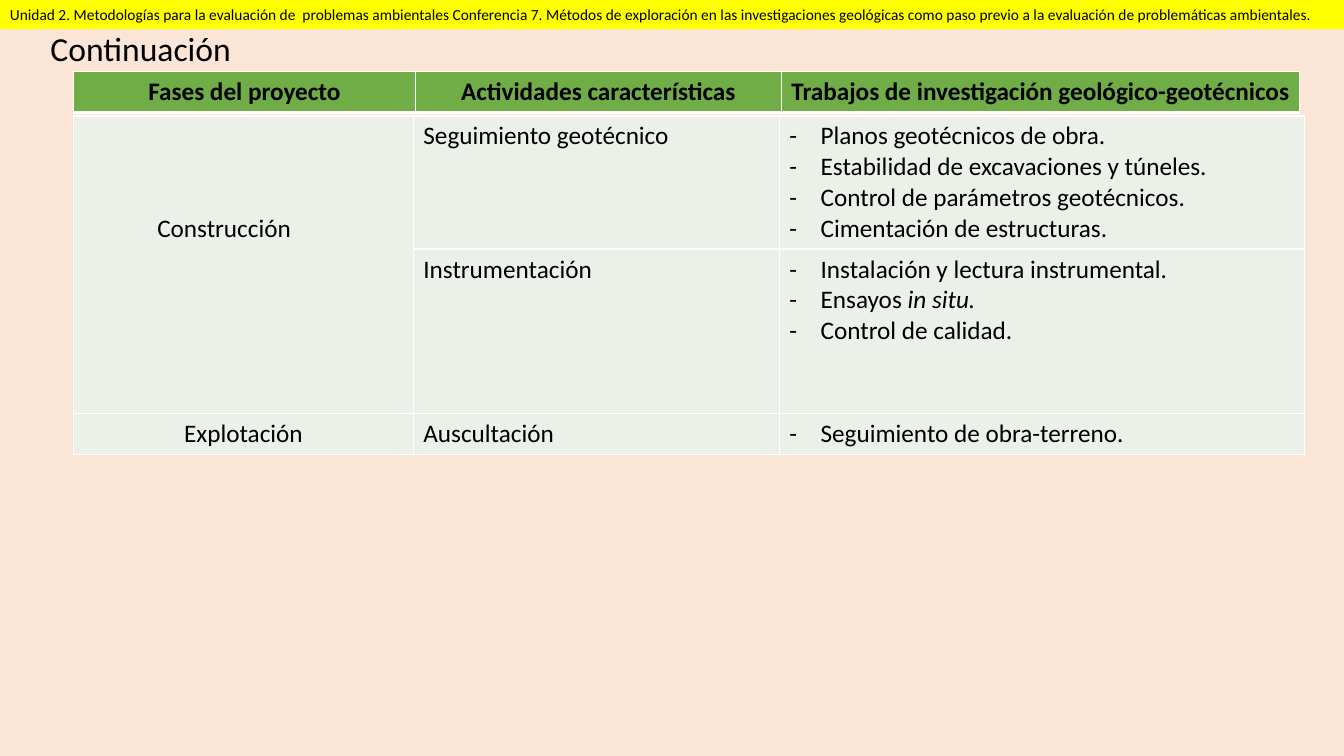
from lxml import etree
from pptx import Presentation
from pptx.dml.color import RGBColor
from pptx.enum.shapes import MSO_SHAPE
from pptx.enum.text import MSO_ANCHOR, MSO_AUTO_SIZE, PP_ALIGN
from pptx.oxml.ns import qn
from pptx.util import Inches, Pt

RECT = MSO_SHAPE.RECTANGLE
TOP, MIDDLE = MSO_ANCHOR.TOP, MSO_ANCHOR.MIDDLE
NO_FIT = MSO_AUTO_SIZE.NONE
LEFT, CENTER = PP_ALIGN.LEFT, PP_ALIGN.CENTER

COLORS = {
    "background": "FBE5D6",
    "banner": "FFFF00",
    "header": "70AD47",
    "body": "EBF1E9",
    "border": "FFFFFF",
    "text": "000000",
}
BANNER = (
    "Unidad 2. Metodologías para la evaluación de  problemas ambientales "
    "Conferencia 7. Métodos de exploración en las investigaciones geológicas "
    "como paso previo a la evaluación de problemáticas ambientales."
)
HEADERS = [
    "Fases del proyecto",
    "Actividades características",
    "Trabajos de investigación geológico-geotécnicos",
]
ACTIVITIES = [
    ("Seguimiento geotécnico", [
        ["Planos geotécnicos de obra."],
        ["Estabilidad de excavaciones y túneles."],
        ["Control de parámetros geotécnicos."],
        ["Cimentación de estructuras."],
    ]),
    ("Instrumentación", [
        ["Instalación y lectura instrumental."],
        ["Ensayos ", "in situ."],
        ["Control de calidad."],
    ]),
    ("Auscultación", [["Seguimiento de obra-terreno."]]),
]


class SlideBuilder:
    font = "Calibri"

    def __init__(self, prs):
        self.s = prs.slides.add_slide(prs.slide_layouts[5])
        fill = self.s.background.fill
        fill.solid()
        fill.fore_color.rgb = self.color("background")

    def color(self, name):
        return RGBColor.from_string(COLORS[name])

    def style(self, p, size, align=LEFT, bold=False):
        p.alignment = align
        p.font.name = self.font
        p.font.size = Pt(size)
        p.font.bold = bold
        p.font.color.rgb = self.color("text")

    def title(self, text, left, top, width, height):
        sp = self.s.shapes.title
        sp.left, sp.top = Inches(left), Inches(top)
        sp.width, sp.height = Inches(width), Inches(height)
        tf = sp.text_frame
        tf.text = text
        tf.word_wrap = False
        tf.auto_size = NO_FIT
        tf.vertical_anchor = TOP
        self.style(tf.paragraphs[0], 24)

    def banner(self, text, left, top, width, height):
        sp = self.s.shapes.add_shape(
            RECT, Inches(left), Inches(top), Inches(width), Inches(height))
        sp.shadow.inherit = False
        sp.fill.solid()
        sp.fill.fore_color.rgb = self.color("banner")
        sp.line.fill.background()
        tf = sp.text_frame
        tf.word_wrap = True
        tf.vertical_anchor = MIDDLE
        tf.text = text
        self.style(tf.paragraphs[0], 11)

    def table(self, left, top, widths, heights, fill, bottom=1):
        frame = self.s.shapes.add_table(
            len(heights), len(widths), Inches(left), Inches(top),
            Inches(sum(widths)), Inches(sum(heights)))
        table = frame.table
        table.first_row = table.horz_banding = False
        for column, width in zip(table.columns, widths):
            column.width = Inches(width)
        for row, height in zip(table.rows, heights):
            row.height = Inches(height)
        for cell in table.iter_cells():
            cell.fill.solid()
            cell.fill.fore_color.rgb = self.color(fill)
            self.borders(cell, bottom)
        return table

    def borders(self, cell, bottom):
        tc_pr = cell._tc.get_or_add_tcPr()
        sides = {"lnL": 1, "lnR": 1, "lnT": 1, "lnB": bottom}
        for i, (side, width) in enumerate(sides.items()):
            ln = etree.Element(qn(f"a:{side}"), w=str(Pt(width)))
            solid = etree.SubElement(ln, qn("a:solidFill"))
            etree.SubElement(solid, qn("a:srgbClr"), val=COLORS["border"])
            tc_pr.insert(i, ln)

    def cell_text(self, cell, text, align=LEFT, bold=False):
        cell.text = text
        self.style(cell.text_frame.paragraphs[0], 18, align, bold)

    def cell_list(self, cell, items):
        tf = cell.text_frame
        for i, parts in enumerate(items):
            p = tf.add_paragraph() if i else tf.paragraphs[0]
            self.style(p, 18)
            for j, part in enumerate(parts):
                r = p.add_run()
                r.text = part
                if j:
                    r.font.italic = True
            p_pr = p._p.get_or_add_pPr()
            p_pr.set("marL", str(Inches(0.31)))
            p_pr.set("indent", str(Inches(-0.31)))
            p_pr.insert(0, etree.Element(qn("a:buFont"), typeface=self.font))
            p_pr.insert(1, etree.Element(qn("a:buChar"), char="-"))


def main():
    prs = Presentation()
    prs.slide_width, prs.slide_height = Inches(13.33), Inches(7.5)
    builder = SlideBuilder(prs)

    phases = builder.table(
        0.73, 1.15, [3.37, 3.63, 5.21], [1.32, 1.63, 0.41], "body")
    construction = phases.cell(0, 0)
    construction.merge(phases.cell(1, 0))
    construction.margin_left, construction.margin_top = Inches(0.83), Inches(0.97)
    builder.cell_text(construction, "Construcción")
    builder.cell_text(phases.cell(2, 0), "Explotación", CENTER)
    for row, (activity, works) in enumerate(ACTIVITIES):
        builder.cell_text(phases.cell(row, 1), activity)
        builder.cell_list(phases.cell(row, 2), works)

    header = builder.table(
        0.73, 0.71, [3.39, 3.63, 5.14], [0.39], "header", bottom=3)
    for column, text in enumerate(HEADERS):
        cell = header.cell(0, column)
        cell.margin_left = cell.margin_right = Inches(0.05)
        builder.cell_text(cell, text, CENTER, bold=True)

    builder.title("Continuación", 0.4, 0.23, 2.01, 0.5)
    builder.banner(BANNER, 0, 0, 13.33, 0.29)
    prs.save("out.pptx")


if __name__ == "__main__":
    main()
